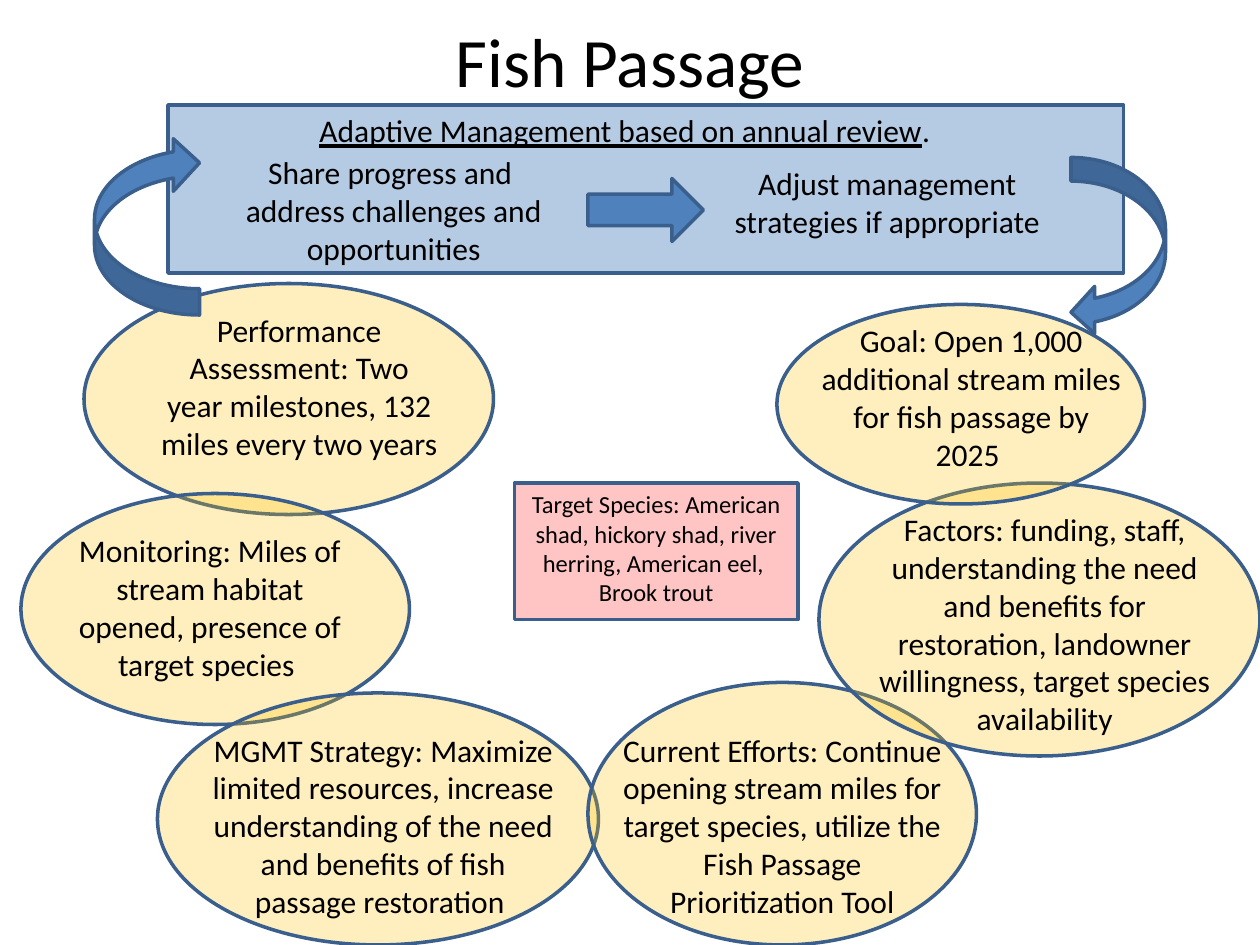
from lxml import etree
from pptx import Presentation
from pptx.dml.color import RGBColor
from pptx.enum.shapes import MSO_SHAPE
from pptx.enum.text import MSO_ANCHOR, MSO_AUTO_SIZE, PP_ALIGN
from pptx.oxml.ns import qn
from pptx.util import Emu, Pt

OVAL, RECT = MSO_SHAPE.OVAL, MSO_SHAPE.RECTANGLE
RIGHT_ARROW, CURVED_ARROW = MSO_SHAPE.RIGHT_ARROW, MSO_SHAPE.CURVED_LEFT_ARROW
MIDDLE, CENTER = MSO_ANCHOR.MIDDLE, PP_ALIGN.CENTER
FIT, NO_FIT = MSO_AUTO_SIZE.SHAPE_TO_FIT_TEXT, MSO_AUTO_SIZE.NONE

EMU_PER_PX = 7620
BLUE, OUTLINE, GOLD, RED, BLACK = "4F81BD", "3A5F8C", "FFC000", "FF0000", "000000"

STAGES = [
    ((80, 270, 390, 220), (140, 290, 290, 157),
     "Performance Assessment: Two year milestones, 132 miles every two years "),
    ((20, 470, 370, 220), (50, 500, 300, 157),
     "Monitoring: Miles of stream habitat opened, presence of target species "),
    ((150, 660, 420, 240), (190, 690, 350, 194),
     "MGMT Strategy: Maximize limited resources, increase understanding of the need "
     "and benefits of fish passage restoration "),
    ((560, 650, 370, 250), (580, 690, 330, 194),
     "Current Efforts: Continue opening stream miles for target species, utilize the "
     "Fish Passage Prioritization Tool"),
    ((780, 460, 420, 260), (820, 480, 350, 230),
     "Factors: funding, staff, understanding the need and benefits for restoration, "
     "landowner willingness, target species availability"),
    ((740, 290, 350, 190), (770, 300, 310, 157),
     "Goal: Open 1,000 additional stream miles for fish passage by 2025 "),
]


def px(n):
    return Emu(n * EMU_PER_PX)


def color(value):
    return RGBColor.from_string(value)


def set_attrs(obj, values):
    for name, value in values.items():
        setattr(obj, name, value)


def add_shape(s, kind, box, fill, alpha=100, rotation=0):
    sp = s.shapes.add_shape(kind, *map(px, box))
    sp.shadow.inherit = False
    sp.rotation = rotation
    sp.fill.solid()
    sp.fill.fore_color.rgb = color(fill)
    if alpha < 100:
        clr = sp.fill._xPr.find(qn("a:solidFill"))[0]
        etree.SubElement(clr, qn("a:alpha")).set("val", str(alpha * 1000))
    sp.line.color.rgb = color(OUTLINE)
    sp.line.width = Pt(2)


def add_run(p, text, size, underline=None):
    r = p.add_run()
    r.text = text
    set_attrs(r.font, {"name": "Calibri", "size": Pt(size), "underline": underline})
    r.font.color.rgb = color(BLACK)


def add_text(s, box, lines, size=18):
    tf = s.shapes.add_textbox(*map(px, box)).text_frame
    set_attrs(tf, {"word_wrap": True, "auto_size": FIT})
    for i, runs in enumerate(lines):
        p = tf.add_paragraph() if i else tf.paragraphs[0]
        p.alignment = CENTER
        for text, underline in runs:
            add_run(p, text, size, underline)


def add_title(s, box, text):
    sp = s.shapes.title
    set_attrs(sp, dict(zip(("left", "top", "width", "height"), map(px, box))))
    tf = sp.text_frame
    set_attrs(tf, {"vertical_anchor": MIDDLE, "auto_size": NO_FIT})
    p = tf.paragraphs[0]
    p.alignment = CENTER
    add_run(p, text, 39.6)


def add_review_panel(s):
    add_shape(s, RECT, (160, 100, 910, 160), BLUE, 42)
    add_text(s, (170, 100, 850, 48),
             [[("Adaptive Management based on annual review", True), (".", None)]])
    add_text(s, (190, 140, 370, 121),
             [[("Share progress and ", None)],
              [("address challenges and opportunities", None)]])
    add_shape(s, RIGHT_ARROW, (560, 170, 110, 60), BLUE)
    add_text(s, (660, 150, 370, 85),
             [[("Adjust management strategies if appropriate", None)]])


def main():
    prs = Presentation()
    set_attrs(prs, {"slide_width": px(1200), "slide_height": px(900)})
    s = prs.slides.add_slide(prs.slide_layouts[5])
    add_title(s, (60, 30, 1080, 54), "Fish Passage")
    for oval, _, _ in STAGES:
        add_shape(s, OVAL, oval, GOLD, 25)
    add_review_panel(s)
    for _, box, text in STAGES:
        add_text(s, box, [[(text, None)]])
    add_shape(s, CURVED_ARROW, (1020, 150, 90, 170), BLUE)
    add_shape(s, CURVED_ARROW, (90, 130, 100, 170), BLUE, rotation=180)
    add_shape(s, RECT, (490, 460, 270, 130), RED, 23)
    add_text(s, (470, 460, 310, 125),
             [[("Target Species: American shad, hickory shad, river herring, "
                "American eel, ", None)],
              [("Brook trout", None)]], 14)
    prs.save("out.pptx")


if __name__ == "__main__":
    main()
